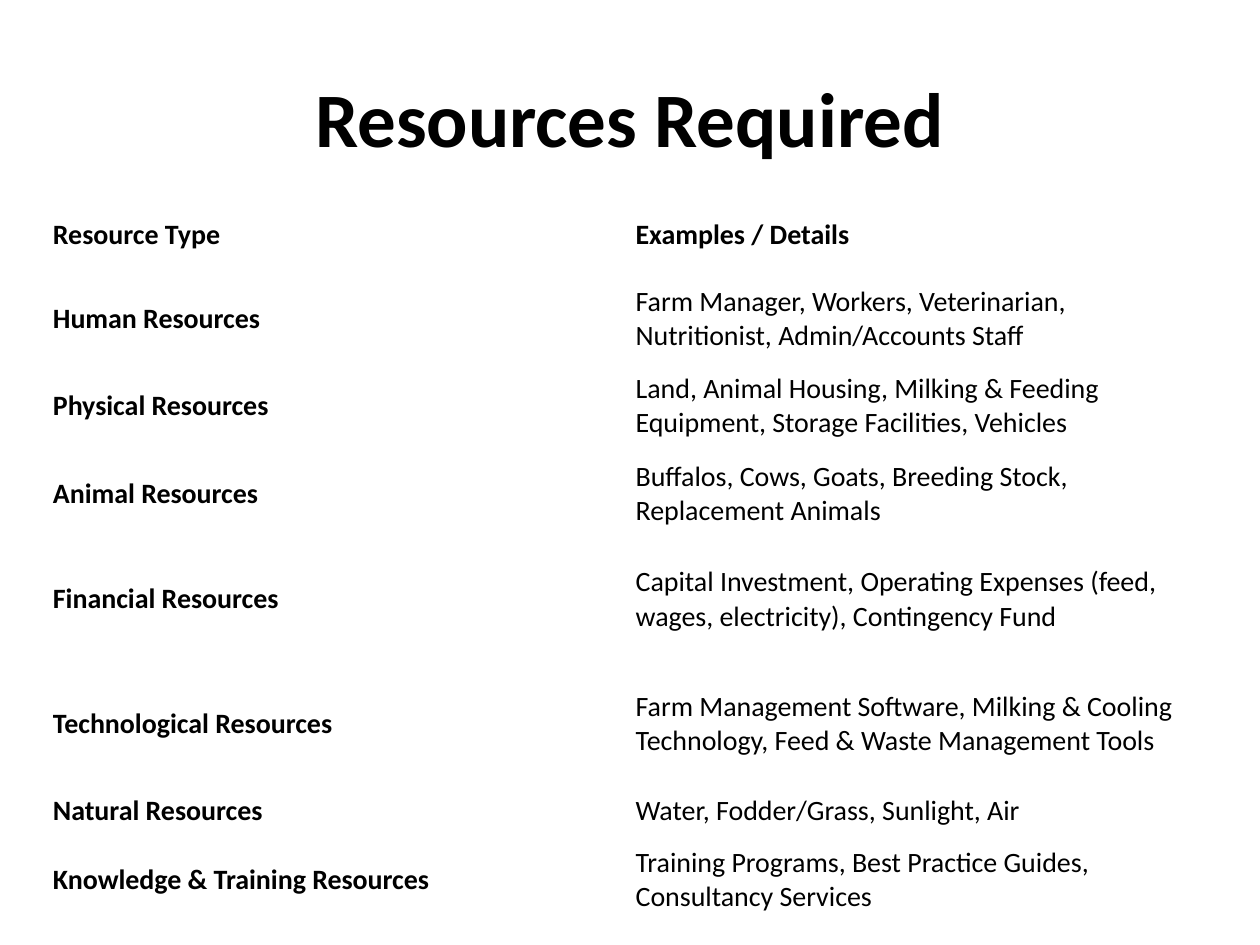
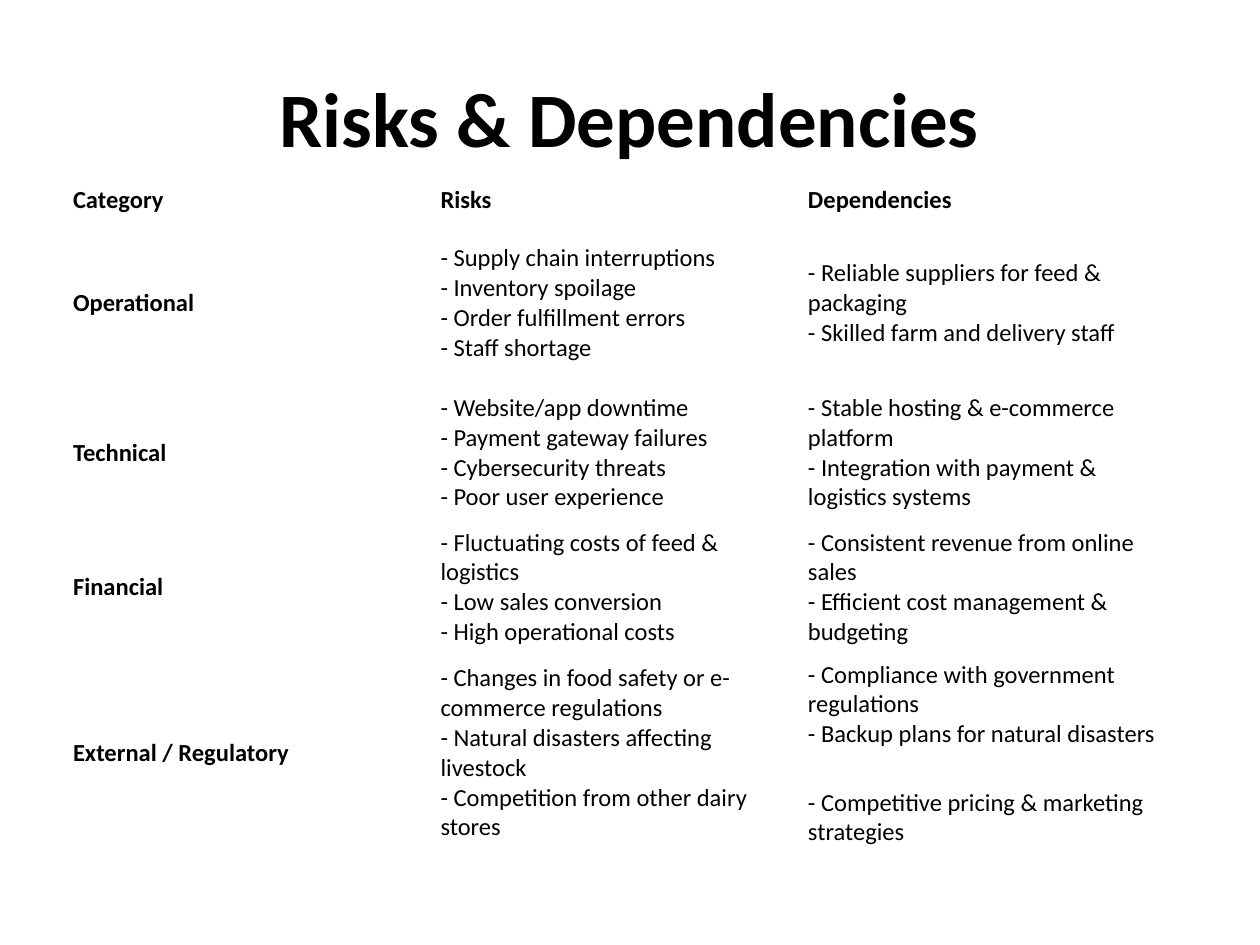
import pptx
import pptx.dml.color
import pptx.enum.text
import pptx.util

Pt = pptx.util.Pt
BLACK = pptx.dml.color.RGBColor(0, 0, 0)
FONT = "Calibri"
MIDDLE = pptx.enum.text.MSO_ANCHOR.MIDDLE

TITLE_BOX = (36, 21.6, 648, 90)

RESOURCES_BOX = (23.75, 111.6, 666)
RESOURCES_HEIGHTS = [45.5, 50, 50, 50, 71, 71, 29, 50]
RESOURCES = [
    ["Resource Type", "Examples / Details"],
    ["Human Resources",
     "Farm Manager, Workers, Veterinarian, Nutritionist, Admin/Accounts Staff"],
    ["Physical Resources",
     "Land, Animal Housing, Milking & Feeding Equipment, Storage Facilities, Vehicles"],
    ["Animal Resources",
     "Buffalos, Cows, Goats, Breeding Stock, Replacement Animals"],
    ["Financial Resources",
     "Capital Investment, Operating Expenses (feed, wages, electricity), Contingency Fund"],
    ["Technological Resources",
     "Farm Management Software, Milking & Cooling Technology, Feed & Waste Management Tools"],
    ["Natural Resources", "Water, Fodder/Grass, Sunlight, Air"],
    ["Knowledge & Training Resources",
     "Training Programs, Best Practice Guides, Consultancy Services"],
]

RISKS_BOX = (36, 102.25, 630)
RISKS_HEIGHTS = [24, 94, 77, 77, 112]
RISKS = [
    ["Category", "Risks", "Dependencies"],
    ["Operational",
     "- Supply chain interruptions \n- Inventory spoilage \n"
     "- Order fulfillment errors \n- Staff shortage",
     "- Reliable suppliers for feed & packaging \n- Skilled farm and delivery staff"],
    ["Technical",
     "- Website/app downtime \n- Payment gateway failures \n"
     "- Cybersecurity threats \n- Poor user experience",
     "- Stable hosting & e-commerce platform \n"
     "- Integration with payment & logistics systems"],
    ["Financial",
     "- Fluctuating costs of feed & logistics \n- Low sales conversion \n"
     "- High operational costs",
     "- Consistent revenue from online sales \n"
     "- Efficient cost management & budgeting"],
    ["External / Regulatory",
     "- Changes in food safety or e-commerce regulations \n"
     "- Natural disasters affecting livestock \n"
     "- Competition from other dairy stores",
     "- Compliance with government regulations \n"
     "- Backup plans for natural disasters \n"
     "- Competitive pricing & marketing strategies"],
]


def add_text(p, text, size, bold):
    """Write text run by run, with a line break between its lines."""
    for i, line in enumerate(text.split("\n")):
        if i:
            p.add_line_break()
        r = p.add_run()
        r.text = line
        r.font.name = FONT
        r.font.size = Pt(size)
        r.font.bold = bold
        r.font.color.rgb = BLACK


def add_title(s, box, text):
    """Place the centred bold title in its box."""
    tf = s.shapes.add_textbox(*map(Pt, box)).text_frame
    tf.word_wrap = True
    tf.vertical_anchor = MIDDLE
    p = tf.paragraphs[0]
    p.alignment = pptx.enum.text.PP_ALIGN.CENTER
    add_text(p, text, 44, True)


def add_grid(s, box, rows, heights, size, inset):
    """Place an unfilled table of equal columns with bold first row and column."""
    left, top, width = box
    n = len(rows[0])
    table = s.shapes.add_table(len(rows), n, Pt(left), Pt(top),
                               Pt(width), Pt(sum(heights))).table
    table.first_row = False
    table.horz_banding = False
    for column in table.columns:
        column.width = Pt(width / n)
    for i, (row, height) in enumerate(zip(rows, heights)):
        table.rows[i].height = Pt(height)
        for j, text in enumerate(row):
            cell = table.cell(i, j)
            cell.fill.background()
            cell.vertical_anchor = MIDDLE
            cell.margin_left = cell.margin_right = Pt(inset)
            cell.margin_top = cell.margin_bottom = Pt(inset / 2)
            add_text(cell.text_frame.paragraphs[0], text, size, i == 0 or j == 0)


def add_table_slide(prs, title, *grid):
    """Add a slide with a title and one table."""
    s = prs.slides.add_slide(prs.slide_layouts[6])
    add_title(s, TITLE_BOX, title)
    add_grid(s, *grid)


def main():
    """Build and save the presentation."""
    prs = pptx.Presentation()
    prs.slide_width = Pt(720)
    prs.slide_height = Pt(540)
    add_table_slide(prs, "Resources Required",
                    RESOURCES_BOX, RESOURCES, RESOURCES_HEIGHTS, 16, 6.5)
    add_table_slide(prs, "Risks & Dependencies",
                    RISKS_BOX, RISKS, RISKS_HEIGHTS, 14, 5.75)
    prs.save("out.pptx")


if __name__ == "__main__":
    main()
